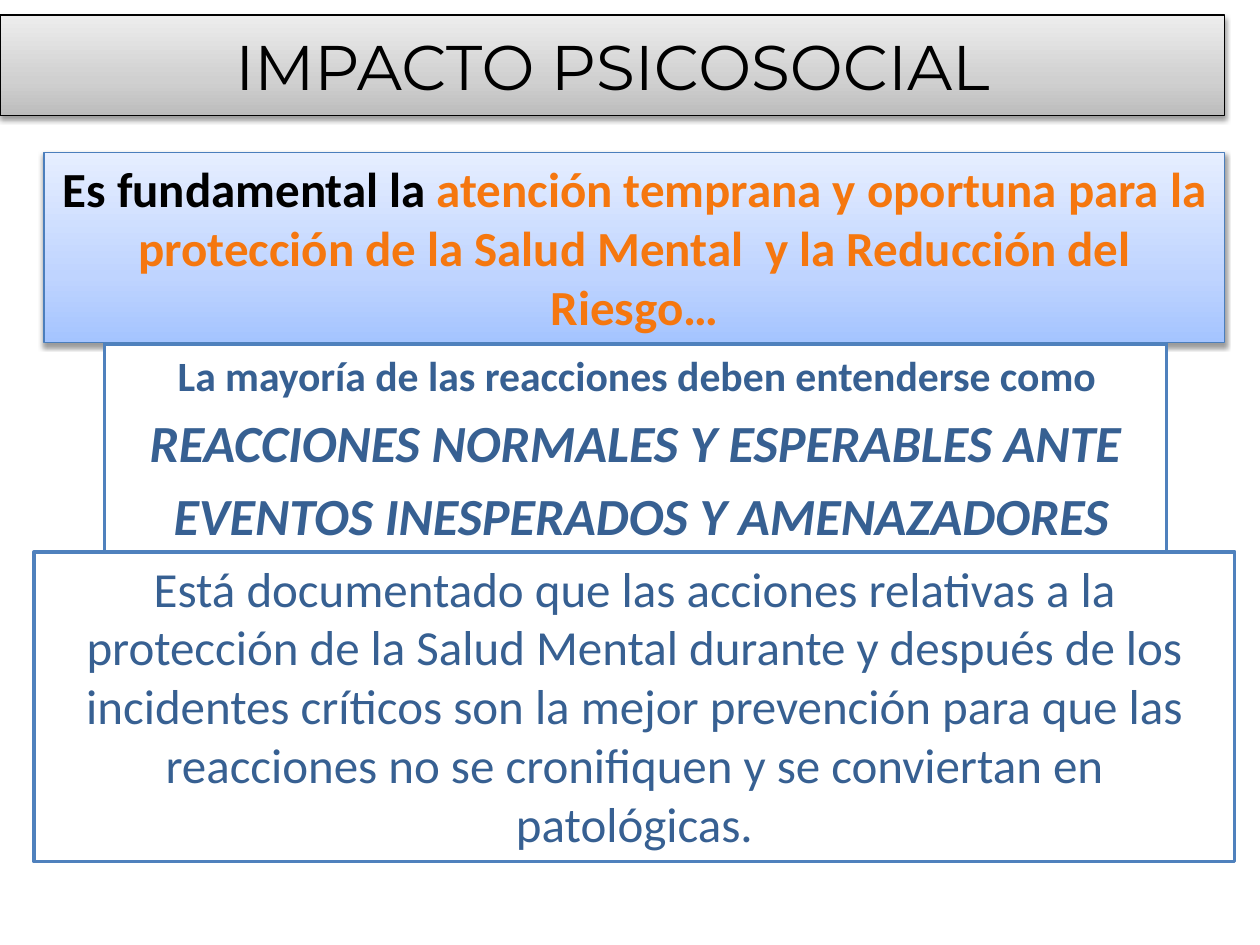
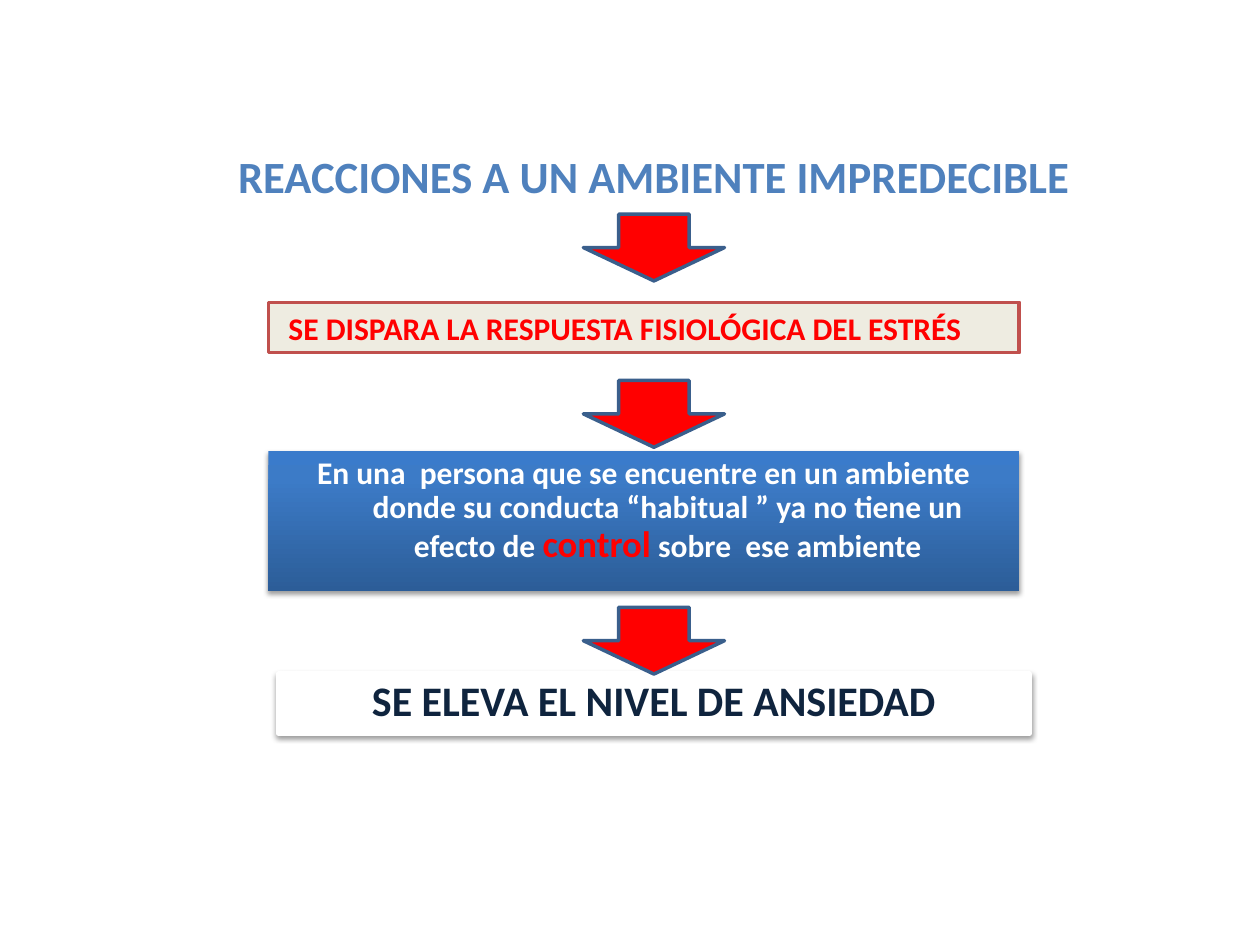
import copy

import pptx
import pptx.dml.color
import pptx.enum.shapes
import pptx.enum.text
import pptx.oxml
import pptx.oxml.ns
import pptx.util
from pptx.util import Inches, Pt

SHAPE = pptx.enum.shapes.MSO_SHAPE
ALIGN = pptx.enum.text.PP_ALIGN
ANCHOR = pptx.enum.text.MSO_ANCHOR
qn = pptx.oxml.ns.qn


class Theme:
    # Colours
    black, white, red = "000000", "FFFFFF", "FF0000"
    blue, text_blue, edge_blue, arrow_edge = "4F81BD", "376092", "4B7EBC", "3A5F8C"
    orange, brick, cream, navy = "F5770F", "C0504D", "EEECE1", "0F243E"
    # Gradients from top to bottom: (position, colour)
    grey_fade = [(0, "EDEDED"), (0.65, "D0D0D0"), (1, "BCBCBC")]
    pale_fade = [(0, "E6EEFF"), (0.65, "BFD4FF"), (1, "A4C4FF")]
    deep_fade = [(0, "3A7BCB"), (0.2, "3C7BC7"), (1, "2C5D98")]
    # Fonts and sizes
    body_font, title_font = "Calibri", "Montserrat"
    title, large, body, heading = 36, 29.8, 28, 25.5
    result, lead, accent, small = 24, 23.8, 21, 18


T = Theme


def rgb(value):
    return pptx.dml.color.RGBColor.from_string(value)


class Deck:
    def __init__(self):
        self.prs = pptx.Presentation()
        self.prs.slide_width, self.prs.slide_height = Inches(10), Inches(7.5)
        self.s = None

    def slide(self):
        self.s = self.prs.slides.add_slide(self.prs.slide_layouts[6])

    def shape(self, at, fill, line=None, width=2, shadow=False, kind=SHAPE.RECTANGLE):
        sp = self.s.shapes.add_shape(kind, *map(Inches, at))
        if isinstance(fill, list):
            self.fade(sp, fill)
        else:
            sp.fill.solid()
            sp.fill.fore_color.rgb = rgb(fill)
        if line:
            sp.line.color.rgb = rgb(line)
            sp.line.width = Pt(width)
        else:
            sp.line.fill.background()
        sp.shadow.inherit = False
        if shadow:
            self.drop_shadow(sp)
        return sp

    def fade(self, sp, stops):
        sp.fill.gradient()
        sp.fill.gradient_angle = 270
        gs_list = sp._element.spPr.find(".//" + qn("a:gsLst"))
        gs_list.insert(1, copy.deepcopy(gs_list[0]))
        for stop, (position, colour) in zip(sp.fill.gradient_stops, stops):
            stop.position = position
            stop.color.rgb = rgb(colour)

    def drop_shadow(self, sp):
        effects = sp._element.spPr.find(qn("a:effectLst"))
        effects.append(pptx.oxml.parse_xml(
            f'<a:outerShdw {pptx.oxml.ns.nsdecls("a")} blurRad="{int(Pt(3.1))}" '
            f'dist="{int(Pt(1.6))}" dir="5400000" rotWithShape="0">'
            '<a:srgbClr val="000000"><a:alpha val="38000"/></a:srgbClr></a:outerShdw>'))

    def label(self, at):
        return self.s.shapes.add_textbox(*map(Inches, at))

    def text(self, sp, paragraphs, align=ALIGN.CENTER, anchor=ANCHOR.TOP,
             inset=(0.1, 0.05), hang=None, spacing=None, before=0):
        """Each paragraph is a list of runs: (text, size, colour, style, font)."""
        tf = sp.text_frame
        tf.word_wrap = True
        tf.vertical_anchor = anchor
        tf.margin_left = tf.margin_right = Inches(inset[0])
        tf.margin_top = tf.margin_bottom = Inches(inset[1])
        for i, runs in enumerate(paragraphs):
            p = tf.add_paragraph() if i else tf.paragraphs[0]
            p.alignment = align
            if hang:
                pPr = p._p.get_or_add_pPr()
                pPr.set("marL", str(int(Inches(hang[0]))))
                pPr.set("indent", str(int(Inches(hang[1]))))
            if spacing:
                p.line_spacing = spacing
            if i and before:
                p.space_before = Pt(before)
            for content, size, colour, style, *font in runs:
                r = p.add_run()
                r.text = content
                r.font.size = Pt(size)
                r.font.color.rgb = rgb(colour)
                r.font.bold = "b" in style
                r.font.italic = "i" in style
                r.font.name = font[0] if font else T.body_font

    def arrow(self, top):
        self.shape((4.63, top, 1.12, 0.53), T.red, T.arrow_edge, kind=SHAPE.DOWN_ARROW)


def impact_slide(d):
    d.slide()
    # Early care
    care = d.shape((0.35, 1.21, 9.37, 1.51), T.pale_fade, T.edge_blue, 0.75, shadow=True)
    d.text(care, [[
        ("Es fundamental la ", T.body, T.black, "b"),
        ("atención temprana y oportuna para la protección de la Salud Mental  "
         "y la Reducción del Riesgo…", T.body, T.orange, "b")]])

    # Normal reactions
    normal = d.shape((0.83, 2.73, 8.43, 1.68), T.white, T.blue)
    d.text(normal, [
        [("La mayoría de las reacciones deben entenderse como ", T.lead, T.text_blue, "b")],
        [("REACCIONES NORMALES Y ESPERABLES ANTE ", T.large, T.text_blue, "bi")],
        [("EVENTOS INESPERADOS Y AMENAZADORES", T.large, T.text_blue, "bi")],
    ], hang=(0.4, -0.31), before=6)

    # Title band
    band = d.shape((0, 0.12, 9.72, 0.8), T.grey_fade, T.black, 0.75, shadow=True)
    d.text(band, [[("IMPACTO PSICOSOCIAL", T.title, T.black, "", T.title_font)]],
           anchor=ANCHOR.MIDDLE)

    # Evidence
    evidence = d.shape((0.27, 4.38, 9.53, 2.46), T.white, T.blue)
    d.text(evidence, [[
        ("Está documentado que las acciones relativas a la protección de la Salud Mental "
         "durante y después de los incidentes críticos son la mejor prevención para que las "
         "reacciones no se cronifiquen y se conviertan en patológicas.",
         T.body, T.text_blue, "")]])


def reactions_slide(d):
    d.slide()
    # Heading
    d.text(d.label((1.7, 1.14, 6.98, 0.51)),
           [[("REACCIONES A UN AMBIENTE IMPREDECIBLE", T.heading, T.blue, "b")]],
           inset=(0.07, 0.04))

    # Steps
    person = d.shape((2.13, 3.58, 5.96, 1.11), T.deep_fade, shadow=True)
    d.text(person, [[
        ("En una  persona que se encuentre en un ambiente donde su conducta “habitual ” "
         "ya no tiene un efecto de ", T.small, T.white, "b"),
        ("control", T.accent, T.red, "b"),
        (" sobre  ese ambiente", T.small, T.white, "b")]],
        hang=(0.38, -0.38), spacing=0.9)

    stress = d.shape((2.13, 2.4, 5.96, 0.4), T.cream, T.brick)
    d.text(stress, [[("SE DISPARA LA RESPUESTA FISIOLÓGICA DEL ESTRÉS", T.small, T.red, "b")]],
           align=ALIGN.LEFT, inset=(0.16, 0.05))

    anxiety = d.shape((2.21, 5.35, 5.96, 0.47), T.white, T.white, 3, shadow=True)
    d.text(anxiety, [[("SE ELEVA EL NIVEL DE ANSIEDAD", T.result, T.navy, "b")]], spacing=0.9)

    # Arrows between the steps
    for top in (1.7, 3.02, 4.82):
        d.arrow(top)


def main():
    d = Deck()
    impact_slide(d)
    reactions_slide(d)
    d.prs.save("out.pptx")


if __name__ == "__main__":
    main()
